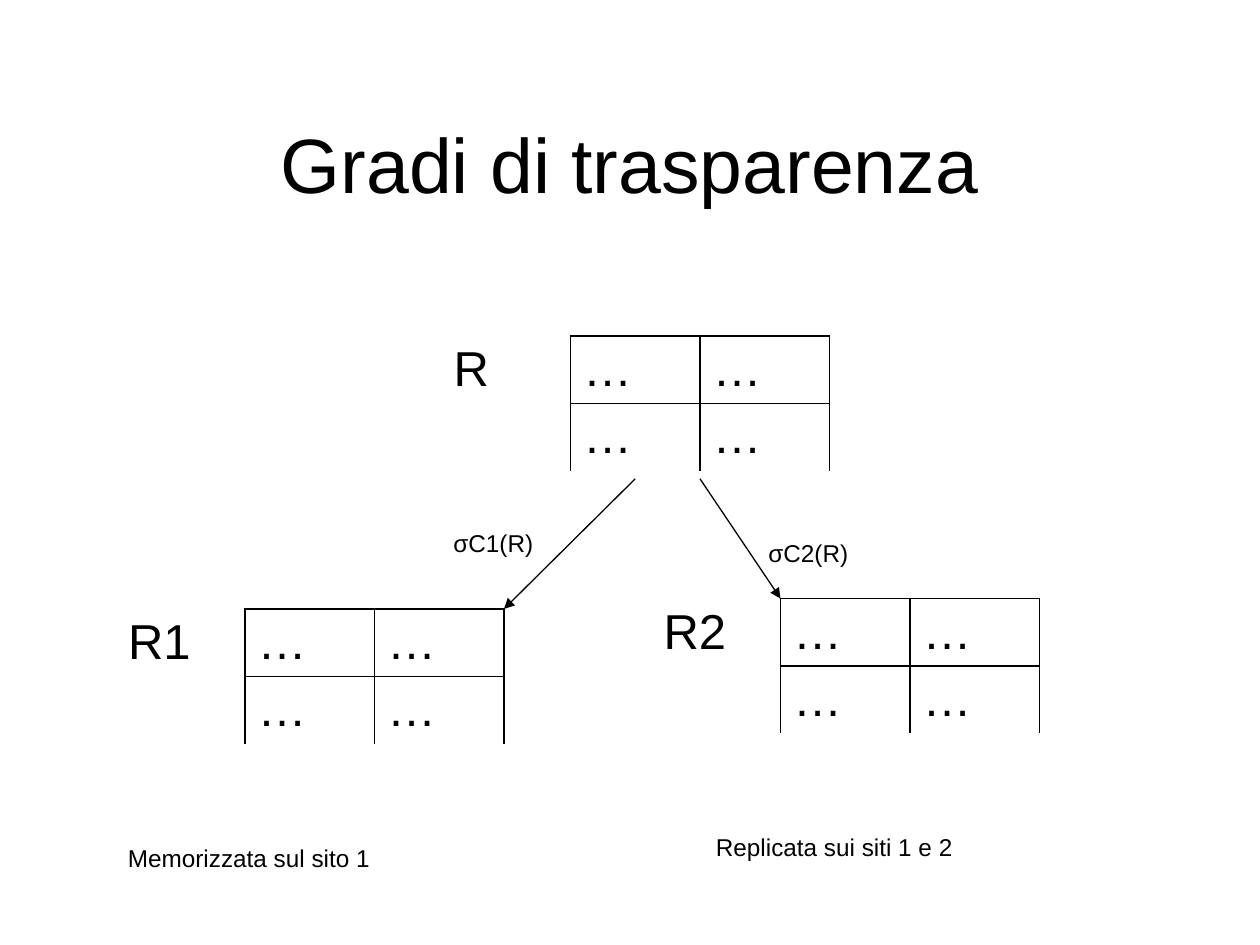
from lxml import etree
from pptx import Presentation
from pptx import util as u
from pptx.dml.color import RGBColor
from pptx.enum import shapes, text
from pptx.oxml.ns import qn

BLACK = "000000"


def colour(hex_code):
    return RGBColor.from_string(hex_code)


def grid(units):
    """Turn grid units, twelve to the inch, into a length."""
    return u.Inches(units / 12)


class Diagram:
    FONT = "Arial"
    TABLE_COLUMNS, TABLE_ROWS = 3, 2
    TABLE_WIDTH = 37
    ROW_HEIGHT = 5.3
    COLUMN_WIDTH = TABLE_WIDTH / TABLE_COLUMNS

    def __init__(self, slide):
        self.slide = slide

    def style_runs(self, frame, size):
        for paragraph in frame.paragraphs:
            for run in paragraph.runs:
                run.font.name = self.FONT
                run.font.size = u.Pt(size)
                run.font.color.rgb = colour(BLACK)

    def title(self, wording, left, top, width, height):
        heading = self.slide.shapes.title
        heading.left, heading.top = grid(left), grid(top)
        heading.width, heading.height = grid(width), grid(height)
        frame = heading.text_frame
        frame.text = wording
        frame.vertical_anchor = text.MSO_ANCHOR.MIDDLE
        frame.paragraphs[0].alignment = text.PP_ALIGN.CENTER
        self.style_runs(frame, 44)

    def caption(self, wording, left, top, width):
        """Add a one-line note set in lowered, reduced type."""
        box = self.slide.shapes.add_textbox(
            grid(left), grid(top), grid(width), grid(6))
        frame = box.text_frame
        frame.word_wrap = False
        frame.auto_size = text.MSO_AUTO_SIZE.SHAPE_TO_FIT_TEXT
        frame.text = wording
        self.style_runs(frame, 24)
        for run in frame.paragraphs[0].runs:
            run.font._element.set("baseline", "-25000")

    def borders(self, cell, drawn):
        """Rule the edges named in drawn (L, R, T, B) and clear the others."""
        properties = cell._tc.get_or_add_tcPr()
        for position, edge in enumerate("LRTB"):
            line = etree.Element(qn(f"a:ln{edge}"), w=str(u.Pt(1)))
            if edge in drawn:
                fill = etree.SubElement(line, qn("a:solidFill"))
                etree.SubElement(fill, qn("a:srgbClr"), val=BLACK)
            else:
                etree.SubElement(line, qn("a:noFill"))
            properties.insert(position, line)

    def relation(self, name, left, top):
        """Add a table whose first column names the relation."""
        table = self.slide.shapes.add_table(
            self.TABLE_ROWS, self.TABLE_COLUMNS, grid(left), grid(top),
            grid(self.TABLE_WIDTH),
            grid(self.ROW_HEIGHT * self.TABLE_ROWS)).table
        table.first_row = table.horz_banding = False
        for r in range(self.TABLE_ROWS):
            for c in range(self.TABLE_COLUMNS):
                cell = table.cell(r, c)
                cell.fill.background()
                if c > 0:
                    cell.text_frame.text = "…"
                    self.borders(cell, "LRTB" if r == 0 else "LRT")
                else:
                    if r == 0:
                        cell.text_frame.text = name
                    self.borders(cell, "R")
                self.style_runs(cell.text_frame, 28)

    def arrow(self, start, end):
        link = self.slide.shapes.add_connector(
            shapes.MSO_CONNECTOR.STRAIGHT, *map(grid, start + end))
        link.line.color.rgb = colour(BLACK)
        link.line.width = u.Pt(0.75)
        etree.SubElement(link.line._get_or_add_ln(), qn("a:tailEnd"),
                         type="triangle")
        etree.SubElement(link._element.spPr, qn("a:effectLst"))


def main():
    deck = Presentation()
    deck.slide_width, deck.slide_height = u.Inches(10), u.Inches(7.5)
    diagram = Diagram(deck.slides.add_slide(deck.slide_layouts[5]))
    diagram.title("Gradi di trasparenza", 9, 8, 102, 15)

    whole, first, second = (42, 32), (11, 58), (62, 57)
    for name, corner in (("R", whole), ("R1", first), ("R2", second)):
        diagram.relation(name, *corner)

    whole_bottom = 45.6
    diagram.arrow((whole[0] + diagram.TABLE_WIDTH / 2, whole_bottom),
                  (first[0] + diagram.TABLE_WIDTH, first[1]))
    diagram.arrow((whole[0] + 2 * diagram.COLUMN_WIDTH, whole_bottom),
                  (second[0] + diagram.COLUMN_WIDTH, second[1]))

    for wording, left, top, width in (
            ("σC1(R)", 42, 47, 13.8),
            ("σC2(R)", 72, 48, 13.8),
            ("Memorizzata sul sito 1", 11, 77, 42.2),
            ("Replicata sui siti 1 e 2", 67, 76, 41.3)):
        diagram.caption(wording, left, top, width)

    deck.save("out.pptx")


if __name__ == "__main__":
    main()
